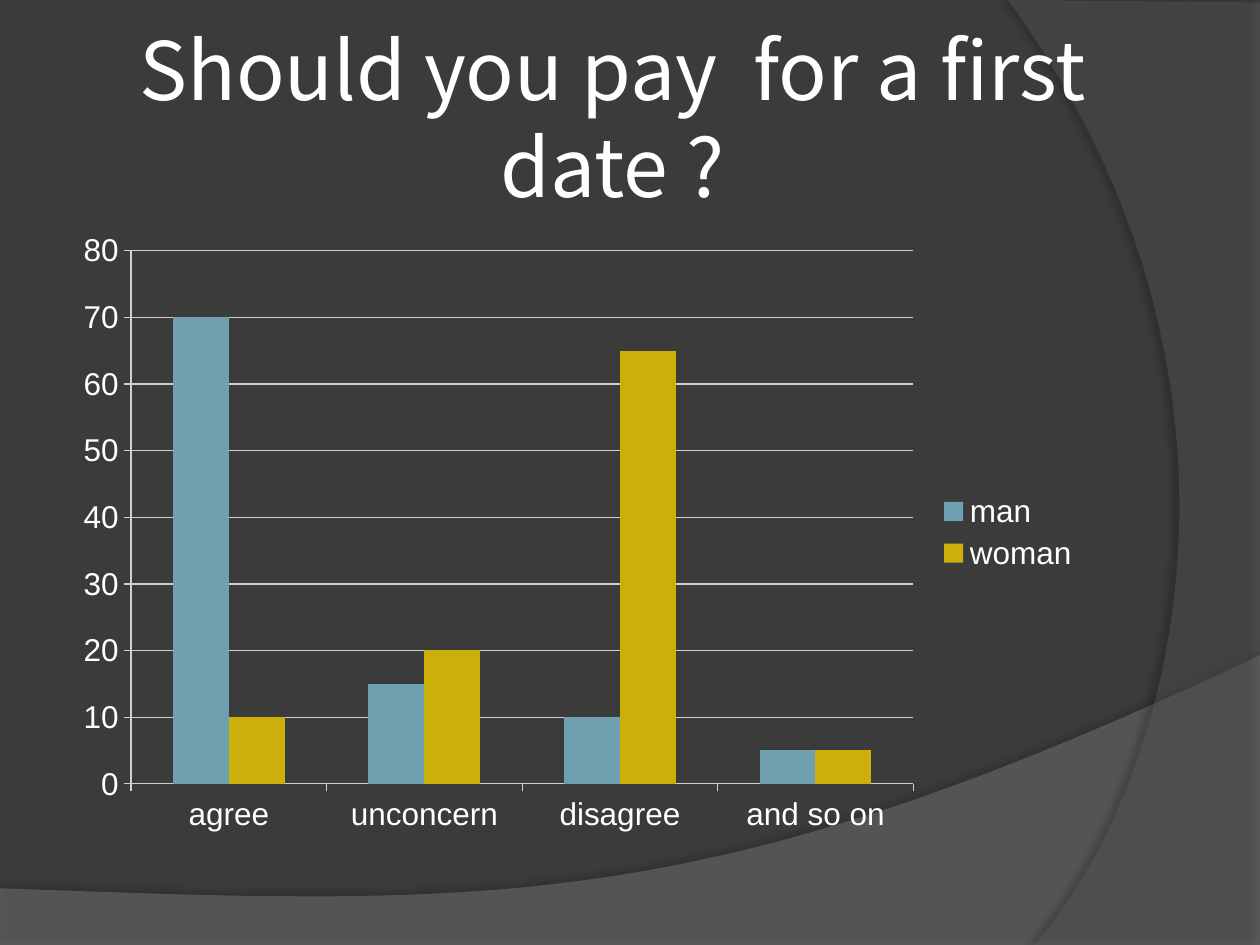
import pptx
import pptx.chart.data
import pptx.dml.color
import pptx.enum.chart
import pptx.enum.text
import pptx.oxml
import pptx.oxml.ns
import pptx.util
from pptx.util import Inches

WHITE = "FFFFFF"
GRID = "D0D0D0"
UNITS_PER_INCH = 1000
CATEGORIES = ["agree", "unconcern", "disagree", "and so on"]
SERIES = [("man", (70, 15, 10, 5), "6EA0B0"), ("woman", (10, 20, 65, 5), "CCAF0A")]


def color(value):
    return pptx.dml.color.RGBColor.from_string(value)


def apply_format(target, values):
    for name, value in values.items():
        setattr(target, name, value)


def place(shape, left, top, width, height):
    box = {"left": left, "top": top, "width": width, "height": height}
    apply_format(shape, {name: Inches(value) for name, value in box.items()})


def set_fill(fill, value):
    fill.solid()
    fill.fore_color.rgb = color(value)


def curve_points(start, control_a, control_b, end, steps=60):
    points = []
    for step in range(1, steps + 1):
        t = step / steps
        weights = ((1 - t) ** 3, 3 * t * (1 - t) ** 2, 3 * t ** 2 * (1 - t), t ** 3)
        corners = (start, control_a, control_b, end)
        points.append(tuple(sum(w * c[axis] for w, c in zip(weights, corners)) for axis in (0, 1)))
    return points


def add_wave(slide, points, fill, opacity, shadow_opacity, shadow_distance, shadow_angle):
    scaled = [(round(x * UNITS_PER_INCH), round(y * UNITS_PER_INCH)) for x, y in points]
    builder = slide.shapes.build_freeform(*scaled[0], scale=Inches(1) / UNITS_PER_INCH)
    builder.add_line_segments(scaled[1:], close=True)
    shape = builder.convert_to_shape()
    set_fill(shape.fill, fill)
    shape.line.fill.background()
    properties = shape.element.spPr
    fill_color = properties.find(".//" + pptx.oxml.ns.qn("a:srgbClr"))
    namespace = pptx.oxml.ns.nsdecls("a")
    fill_color.append(pptx.oxml.parse_xml(f'<a:alpha {namespace} val="{opacity * 1000}"/>'))
    properties.append(pptx.oxml.parse_xml(
        f'<a:effectLst {namespace}><a:outerShdw blurRad="{pptx.util.Pt(4)}" '
        f'dist="{pptx.util.Pt(shadow_distance)}" dir="{shadow_angle * 60000}" '
        f'algn="ctr" rotWithShape="0"><a:srgbClr val="000000">'
        f'<a:alpha val="{shadow_opacity * 1000}"/></a:srgbClr></a:outerShdw></a:effectLst>'))
    slide.shapes.title.element.addprevious(shape.element)


def add_background(slide):
    set_fill(slide.background.fill, "3B3B3B")
    bottom_curve = curve_points((10, 5.2), (5.59, 7.29), (3.91, 7.19), (0, 7.05))
    bottom = [(0, 7.05), (0, 7.51), (10, 7.51), (10, 5.2)] + bottom_curve[:-1]
    add_wave(slide, bottom, "7F7F7F", 45, 35, 3.5, 270)
    side_curve = curve_points((8.21, 7.5), (9.35, 6.19), (10.18, 3), (8, 0))
    side = [(10, 0.02), (10, 7.5), (8.21, 7.5)] + side_curve
    add_wave(slide, side, "5E5E5E", 40, 45, 4, 180)


def format_title(title, text):
    place(title, 0.5, 0.3, 8.72, 1.25)
    frame = title.text_frame
    frame.text = text
    margins = ("margin_left", "margin_top", "margin_right", "margin_bottom")
    apply_format(frame, {name: Inches(0.05) for name in margins})
    apply_format(frame, {
        "word_wrap": True,
        "auto_size": pptx.enum.text.MSO_AUTO_SIZE.NONE,
        "vertical_anchor": pptx.enum.text.MSO_ANCHOR.MIDDLE,
    })
    paragraph = frame.paragraphs[0]
    paragraph.alignment = pptx.enum.text.PP_ALIGN.CENTER
    font = paragraph.runs[0].font
    apply_format(font, {"name": "Noto Sans CJK KR", "size": pptx.util.Pt(46)})
    font.color.rgb = color(WHITE)


def format_line(line):
    line.color.rgb = color(GRID)
    line.width = pptx.util.Pt(0.75)


def add_column_chart(slide):
    data = pptx.chart.data.CategoryChartData()
    data.categories = CATEGORIES
    for name, values, _ in SERIES:
        data.add_series(name, values)
    box = [Inches(value) for value in (0.5, 1.75, 8.17, 4.95)]
    chart_type = pptx.enum.chart.XL_CHART_TYPE.COLUMN_CLUSTERED
    chart = slide.shapes.add_chart(chart_type, *box, data).chart
    apply_format(chart, {"has_title": False, "has_legend": True})
    apply_format(chart.font, {"name": "Arial", "size": pptx.util.Pt(18)})
    chart.font.color.rgb = color(WHITE)
    apply_format(chart.legend, {
        "position": pptx.enum.chart.XL_LEGEND_POSITION.RIGHT,
        "include_in_layout": False,
    })
    plot = chart.plots[0]
    apply_format(plot, {"gap_width": 150, "overlap": 0, "vary_by_categories": False})
    for series, (_, _, fill) in zip(plot.series, SERIES):
        set_fill(series.format.fill, fill)
    for axis in (chart.category_axis, chart.value_axis):
        axis.major_tick_mark = pptx.enum.chart.XL_TICK_MARK.OUTSIDE
        format_line(axis.format.line)
    apply_format(chart.value_axis, {
        "minimum_scale": 0, "maximum_scale": 80, "major_unit": 10, "has_major_gridlines": True,
    })
    format_line(chart.value_axis.major_gridlines.format.line)


def main():
    presentation = pptx.Presentation()
    apply_format(presentation, {"slide_width": Inches(10), "slide_height": Inches(7.5)})
    slide = presentation.slides.add_slide(presentation.slide_layouts[5])
    add_background(slide)
    format_title(slide.shapes.title, "Should you pay  for a first date ?")
    add_column_chart(slide)
    presentation.save("out.pptx")


if __name__ == "__main__":
    main()
